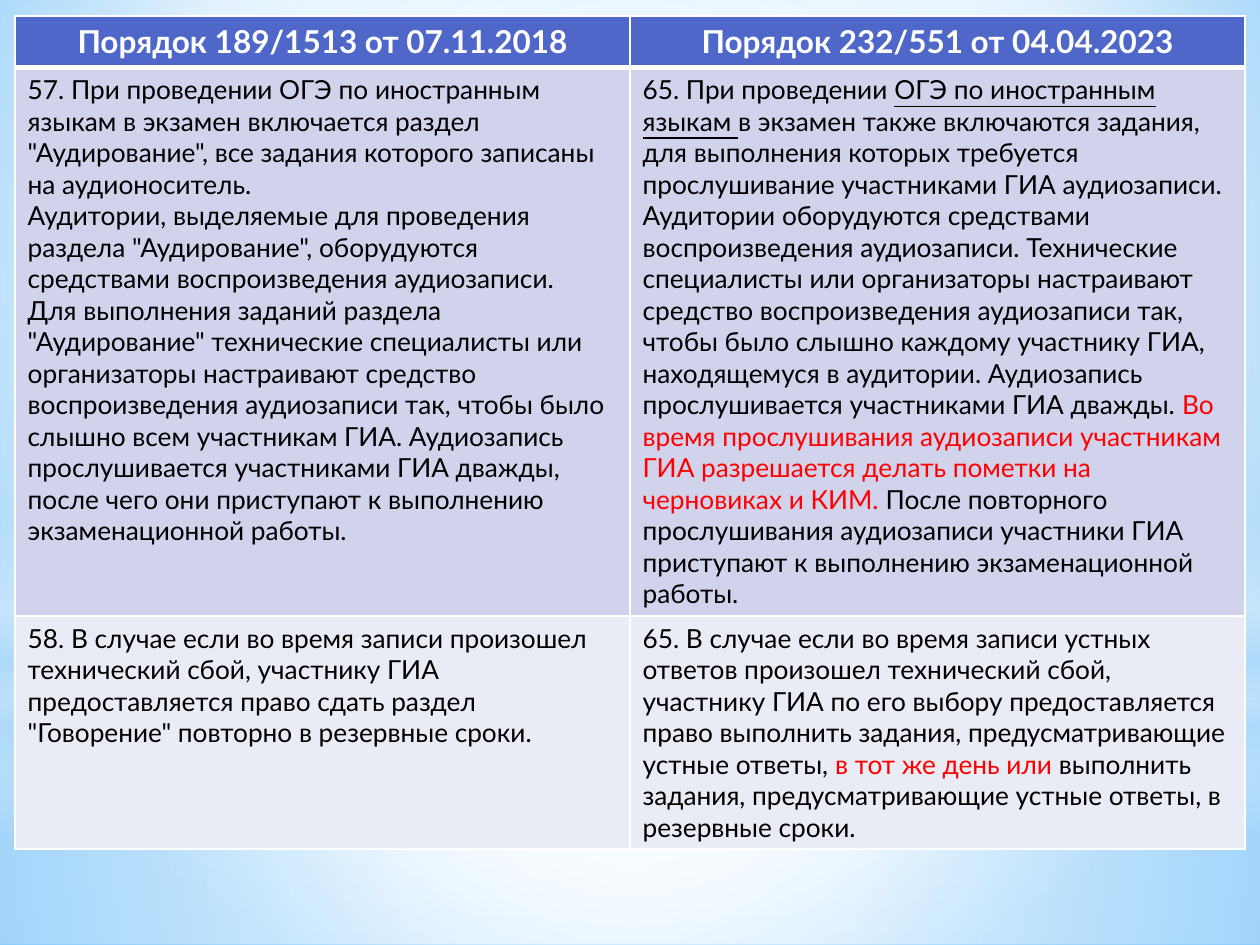
from typing import NamedTuple, Optional

from lxml import etree
from pptx import Presentation
from pptx import util as u
from pptx.dml.color import RGBColor
from pptx.enum import shapes, text
from pptx.oxml import ns

COLORS = {
    "white": "FFFFFF", "black": "000000", "red": "FF0000",
    "header": "4E67C8", "band": "D0D3EB", "light": "E9EBF5",
    "sky": "B4DCFA", "sky_top": "9ED5FF", "sky_edge": "5BB9FF",
}
FONT = "Lato"


class Stop(NamedTuple):
    position: int
    color: str
    opacity: int = 100


class Gradient(NamedTuple):
    stops: list[Stop]
    focus: Optional[tuple[int, int, int, int]] = (50, 50, 50, 50)


class Glow(NamedTuple):
    kind: shapes.MSO_SHAPE
    top: float
    height: float
    gradient: Gradient


class Run(NamedTuple):
    words: str
    color: str = "black"
    underline: bool = False


class Row(NamedTuple):
    height: float
    fill: str
    cells: list[list[list[Run]]]
    size: float = 15
    header: bool = False


SKY = Gradient([Stop(0, "sky_top"), Stop(60, "white"), Stop(100, "sky_edge")], (20, 10, 20, 60))
GLOWS = [
    Glow(shapes.MSO_SHAPE.RECTANGLE, 402, 138, Gradient(
        [Stop(0, "white", 91), Stop(37, "white", 76), Stop(100, "sky", 79)])),
    Glow(shapes.MSO_SHAPE.RECTANGLE, 0, 402, Gradient(
        [Stop(0, "white", 89), Stop(48, "white", 62), Stop(100, "sky", 79)])),
    Glow(shapes.MSO_SHAPE.RECTANGLE, 297, 180, Gradient(
        [Stop(0, "white", 0), Stop(29, "white", 30), Stop(45, "sky", 40),
         Stop(55, "white", 26), Stop(65, "sky", 60), Stop(100, "white", 0)], None)),
    Glow(shapes.MSO_SHAPE.OVAL, 126, 402, Gradient([Stop(0, "white"), Stop(56, "white", 0)])),
]
ROWS = [
    Row(29.5, "header", [
        [[Run("Порядок 189/1513 от 07.11.2018", "white")]],
        [[Run("Порядок 232/551 от 04.04.2023", "white")]],
    ], 18, True),
    Row(313.2, "band", [
        [
            [Run('57. При проведении ОГЭ по иностранным языкам в экзамен включается раздел '
                 '"Аудирование", все задания которого записаны на аудионоситель.')],
            [Run('Аудитории, выделяемые для проведения раздела "Аудирование", оборудуются '
                 'средствами воспроизведения аудиозаписи.')],
            [Run('Для выполнения заданий раздела "Аудирование" технические специалисты или '
                 'организаторы настраивают средство воспроизведения аудиозаписи так, чтобы было '
                 'слышно всем участникам ГИА. Аудиозапись прослушивается участниками ГИА дважды, '
                 'после чего они приступают к выполнению экзаменационной работы.')],
        ],
        [[
            Run("65. При проведении "),
            Run("ОГЭ по иностранным языкам ", underline=True),
            Run("в экзамен также включаются задания, для выполнения которых требуется "
                "прослушивание участниками ГИА аудиозаписи. Аудитории оборудуются средствами "
                "воспроизведения аудиозаписи. Технические специалисты или организаторы "
                "настраивают средство воспроизведения аудиозаписи так, чтобы было слышно каждому "
                "участнику ГИА, находящемуся в аудитории. Аудиозапись прослушивается участниками "
                "ГИА дважды. "),
            Run("Во время прослушивания аудиозаписи участникам ГИА разрешается делать пометки "
                "на черновиках и КИМ. ", "red"),
            Run("После повторного прослушивания аудиозаписи участники ГИА приступают к "
                "выполнению экзаменационной работы."),
        ]],
    ]),
    Row(133.2, "light", [
        [[Run('58. В случае если во время записи произошел технический сбой, участнику ГИА '
              'предоставляется право сдать раздел "Говорение" повторно в резервные сроки.')]],
        [[
            Run("65. В случае если во время записи устных ответов произошел технический сбой, "
                "участнику ГИА по его выбору предоставляется право выполнить задания, "
                "предусматривающие устные ответы, "),
            Run("в тот же день или ", "red"),
            Run("выполнить задания, предусматривающие устные ответы, в резервные сроки."),
        ]],
    ]),
]


def rgb(name: str) -> RGBColor:
    return RGBColor.from_string(COLORS[name])


def add_node(parent, tag: str, **attributes):
    return etree.SubElement(parent, ns.qn(tag), {key: str(value) for key, value in attributes.items()})


def apply_gradient(owner, gradient: Gradient) -> None:
    owner.fill.solid()


def gradient_fill(element, gradient: Gradient) -> None:
    solid = next(element.iter(ns.qn("a:solidFill")))
    parent = solid.getparent()
    fill = etree.Element(ns.qn("a:gradFill"), {"rotWithShape": "1"})
    parent.replace(solid, fill)
    stop_list = add_node(fill, "a:gsLst")
    for stop in gradient.stops:
        node = add_node(stop_list, "a:gs", pos=stop.position * 1000)
        color = add_node(node, "a:srgbClr", val=COLORS[stop.color])
        if stop.opacity < 100:
            add_node(color, "a:alpha", val=stop.opacity * 1000)
    if gradient.focus is None:
        add_node(fill, "a:lin", ang=90 * 60000, scaled=0)
    else:
        sides = {side: value * 1000 for side, value in zip("ltrb", gradient.focus)}
        add_node(add_node(fill, "a:path", path="circle"), "a:fillToRect", **sides)


def add_glow(slide, glow: Glow) -> None:
    shape = slide.shapes.add_shape(glow.kind, 0, u.Pt(glow.top), u.Pt(720), u.Pt(glow.height))
    shape.shadow.inherit = False
    shape.fill.solid()
    gradient_fill(shape.element, glow.gradient)
    shape.line.fill.background()


def set_borders(cell, bottom: float) -> None:
    properties = cell._tc.get_or_add_tcPr()
    for index, (side, width) in enumerate(zip("LRTB", (1, 1, 1, bottom))):
        line = etree.Element(ns.qn(f"a:ln{side}"), {"w": str(u.Pt(width))})
        add_node(add_node(line, "a:solidFill"), "a:srgbClr", val=COLORS["white"])
        properties.insert(index, line)


def fill_cell(cell, row: Row, paragraphs: list[list[Run]]) -> None:
    cell.fill.solid()
    cell.fill.fore_color.rgb = rgb(row.fill)
    set_borders(cell, 3 if row.header else 1)
    frame = cell.text_frame
    for index, runs in enumerate(paragraphs):
        paragraph = frame.add_paragraph() if index else frame.paragraphs[0]
        paragraph.alignment = text.PP_ALIGN.CENTER if row.header else text.PP_ALIGN.LEFT
        for item in runs:
            run = paragraph.add_run()
            run.text = item.words
            run.font.name = FONT
            run.font.size = u.Pt(row.size)
            run.font.bold = row.header
            run.font.underline = item.underline
            run.font.color.rgb = rgb(item.color)


def add_comparison(slide, rows: list[Row]) -> None:
    height = sum(row.height for row in rows)
    table = slide.shapes.add_table(
        len(rows), 2, u.Pt(8.64), u.Pt(9.2), u.Pt(702.8), u.Pt(height)).table
    table.horz_banding = False
    for row_index, row in enumerate(rows):
        table.rows[row_index].height = u.Pt(row.height)
        for column_index, paragraphs in enumerate(row.cells):
            fill_cell(table.cell(row_index, column_index), row, paragraphs)


def main() -> None:
    """Build the slide comparing the two exam procedures."""
    presentation = Presentation()
    presentation.slide_width, presentation.slide_height = u.Pt(720), u.Pt(540)
    slide = presentation.slides.add_slide(presentation.slide_layouts[6])
    slide.background.fill.solid()
    gradient_fill(slide.element, SKY)
    for glow in GLOWS:
        add_glow(slide, glow)
    add_comparison(slide, ROWS)
    presentation.save("out.pptx")


if __name__ == "__main__":
    main()
